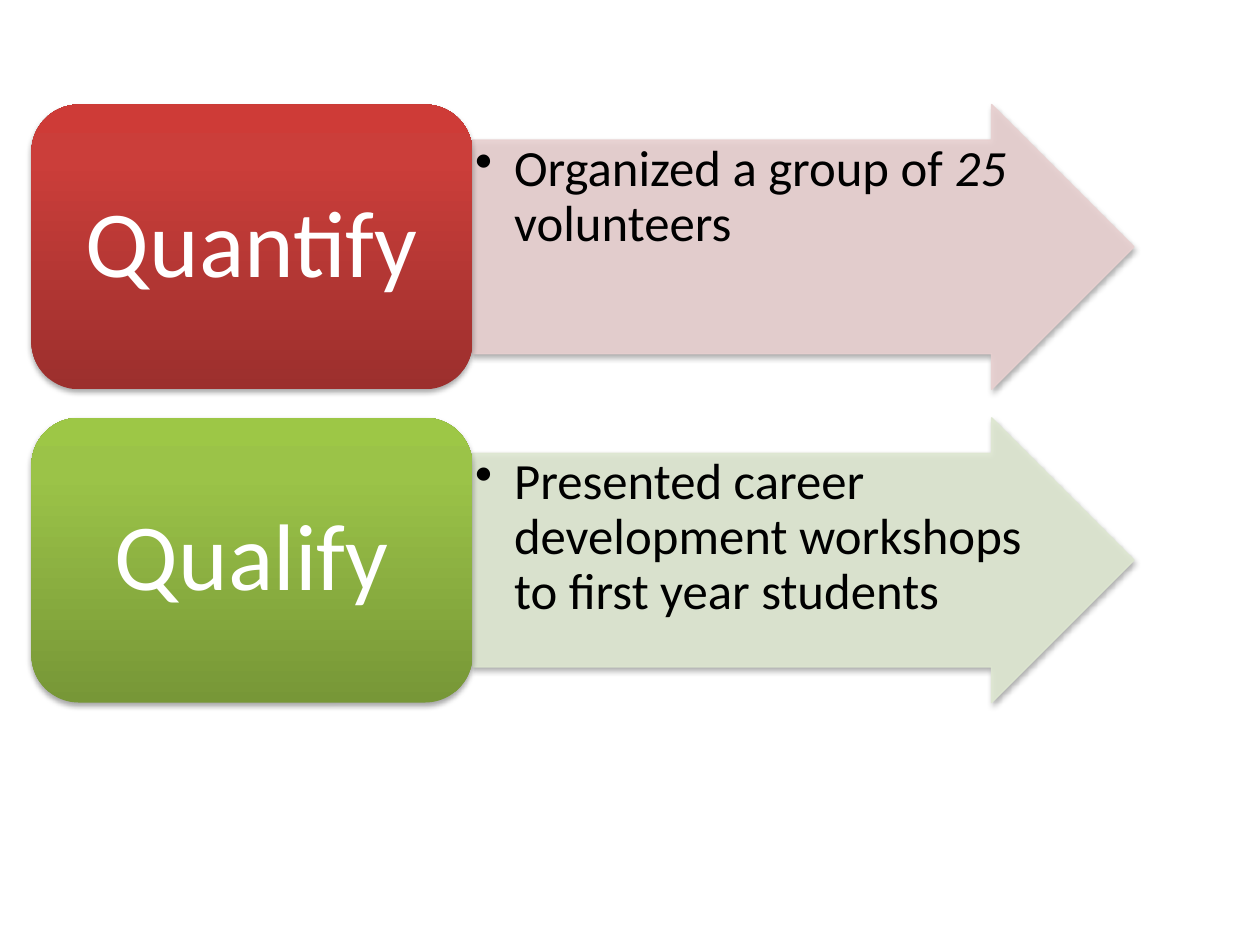
from copy import deepcopy

from lxml.etree import SubElement
from pptx import Presentation
from pptx.dml.color import RGBColor
from pptx.enum.shapes import MSO_SHAPE
from pptx.enum.text import MSO_ANCHOR, PP_ALIGN
from pptx.oxml.ns import qn
from pptx.util import Inches, Pt

BLACK = RGBColor(0, 0, 0)
WHITE = RGBColor(255, 255, 255)
RED_STOPS = [(0, RGBColor(0x9C, 0x2F, 0x2D)), (0.8, RGBColor(0xCB, 0x3E, 0x3A)),
             (1, RGBColor(0xCE, 0x3B, 0x37))]
GREEN_STOPS = [(0, RGBColor(0x77, 0x97, 0x37)), (0.8, RGBColor(0x9B, 0xC3, 0x48)),
               (1, RGBColor(0x9D, 0xC7, 0x46))]
PINK = RGBColor(0xE8, 0xD0, 0xD0)
PALE_GREEN = RGBColor(0xDE, 0xE7, 0xD1)

TIPS = [
    ("Quantify", RED_STOPS, PINK,
     [("Organized a group of ", False), ("25 ", True), ("volunteers", False)]),
    ("Qualify", GREEN_STOPS, PALE_GREEN,
     [("Presented career development workshops to first year students", False)]),
]

LEFT, TOP = 0.25, 0.83
DIAGRAM_WIDTH, ROW_HEIGHT = 8.75, 2.26
ROW_PITCH = ROW_HEIGHT * 1.1
LABEL_WIDTH = DIAGRAM_WIDTH * 0.4
ARROW_WIDTH = DIAGRAM_WIDTH * 0.6


def add_alpha(color, percent):
    SubElement(color, qn("a:alpha"), val=str(percent * 1000))


def add_block(slide, preset, left, top, width):
    block = slide.shapes.add_shape(
        preset, Inches(left), Inches(top), Inches(width), Inches(ROW_HEIGHT))
    block.shadow.inherit = False
    effects = block._element.spPr.find(qn("a:effectLst"))
    shadow = SubElement(effects, qn("a:outerShdw"), blurRad=str(Pt(3.1)),
                        dist=str(Pt(1.8)), dir="5400000", rotWithShape="0")
    add_alpha(SubElement(shadow, qn("a:srgbClr"), val="000000"), 35)
    return block


def format_text(block, size, color, align, anchor, inset_x, inset_y):
    frame = block.text_frame
    frame.word_wrap = True
    frame.vertical_anchor = anchor
    frame.margin_left = frame.margin_right = Inches(inset_x)
    frame.margin_top = frame.margin_bottom = Inches(inset_y)
    paragraph = frame.paragraphs[0]
    paragraph.alignment = align
    paragraph.line_spacing = 0.9
    paragraph.font.name = "Calibri"
    paragraph.font.size = Pt(size)
    paragraph.font.color.rgb = color


def add_arrow(slide, top, tint, wording):
    arrow = add_block(slide, MSO_SHAPE.RIGHT_ARROW, LEFT + LABEL_WIDTH, top, ARROW_WIDTH)
    arrow.adjustments[0] = 0.75
    arrow.adjustments[1] = 0.5
    arrow.fill.solid()
    arrow.fill.fore_color.rgb = tint
    arrow.line.color.rgb = tint
    arrow.line.width = Pt(0.75)
    for color in arrow._element.spPr.findall(".//" + qn("a:solidFill") + "/" + qn("a:srgbClr")):
        add_alpha(color, 90)
    paragraph = arrow.text_frame.paragraphs[0]
    paragraph.level = 1
    properties = paragraph._p.get_or_add_pPr()
    properties.set("marL", str(Inches(0.31)))
    properties.set("indent", str(-Inches(0.31)))
    SubElement(properties, qn("a:buChar"), char="•")
    for text, italic in wording:
        run = paragraph.add_run()
        run.text = text
        if italic:
            run.font.italic = True
    format_text(arrow, 29, BLACK, PP_ALIGN.LEFT, MSO_ANCHOR.TOP, 0.02, 0.02)


def add_label(slide, top, stops, title):
    label = add_block(slide, MSO_SHAPE.ROUNDED_RECTANGLE, LEFT, top, LABEL_WIDTH)
    label.line.fill.background()
    label.fill.gradient()
    label.fill.gradient_angle = 90
    stop_list = label._element.spPr.find(qn("a:gradFill")).find(qn("a:gsLst"))
    stop_list.append(deepcopy(stop_list[-1]))
    for stop, (position, color) in zip(label.fill.gradient_stops, stops):
        stop.position = position
        stop.color.rgb = color
    label.text_frame.text = title
    format_text(label, 54, WHITE, PP_ALIGN.CENTER, MSO_ANCHOR.MIDDLE, 0.23, 0.11)


def main():
    deck = Presentation()
    deck.slide_width, deck.slide_height = Inches(10), Inches(7.5)
    slide = deck.slides.add_slide(deck.slide_layouts[6])
    for row, (title, stops, tint, wording) in enumerate(TIPS):
        top = TOP + row * ROW_PITCH
        add_arrow(slide, top, tint, wording)
        add_label(slide, top, stops, title)
    deck.save("out.pptx")


if __name__ == "__main__":
    main()
